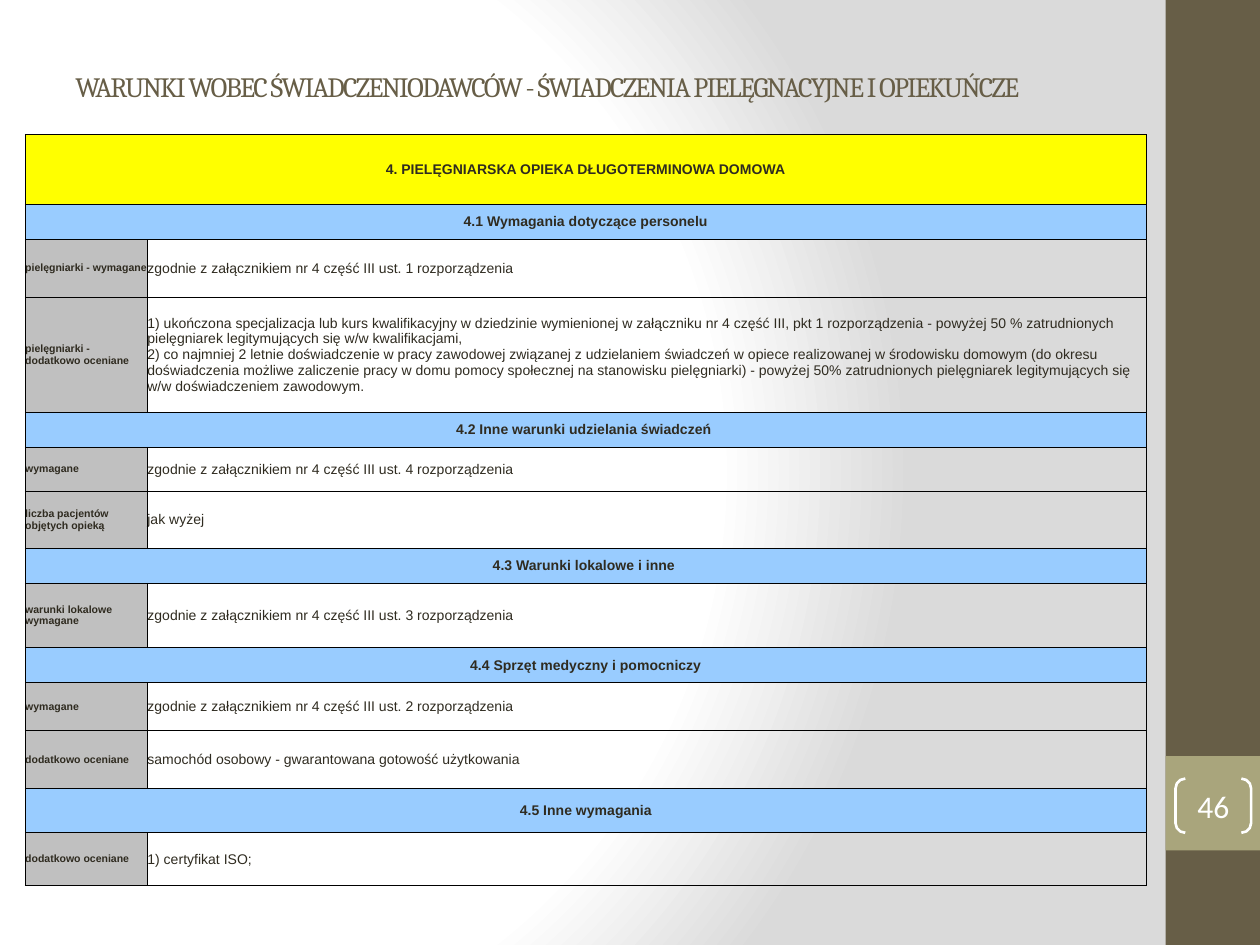
from pptx import Presentation
from pptx.dml.color import RGBColor
from pptx.enum.shapes import MSO_SHAPE
from pptx.enum.text import MSO_ANCHOR, PP_ALIGN
from pptx.oxml import parse_xml
from pptx.oxml.ns import nsdecls
from pptx.util import Inches, Pt

RECTANGLE = MSO_SHAPE.RECTANGLE
BRACKETS = MSO_SHAPE.DOUBLE_BRACKET
MIDDLE = MSO_ANCHOR.MIDDLE
LEFT, CENTER = PP_ALIGN.LEFT, PP_ALIGN.CENTER

BROWN = RGBColor(0x67, 0x5E, 0x47)
OLIVE = RGBColor(0xA9, 0xA5, 0x7C)
INK = RGBColor(0x2F, 0x2B, 0x20)
YELLOW = RGBColor(0xFF, 0xFF, 0x00)
BLUE = RGBColor(0x99, 0xCC, 0xFF)
GRAY = RGBColor(0xC0, 0xC0, 0xC0)
WHITE = RGBColor(0xFF, 0xFF, 0xFF)

TITLE = "WARUNKI WOBEC ŚWIADCZENIODAWCÓW - ŚWIADCZENIA PIELĘGNACYJNE I OPIEKUŃCZE"
COLUMN_WIDTHS = (0.97, 7.93)
QUALIFICATIONS = (
    "1) ukończona specjalizacja lub kurs kwalifikacyjny w dziedzinie wymienionej w "
    "załączniku nr 4 część III, pkt 1 rozporządzenia - powyżej 50 % zatrudnionych "
    "pielęgniarek legitymujących się w/w kwalifikacjami,\n"
    "2) co najmniej 2 letnie doświadczenie w pracy zawodowej związanej z udzielaniem "
    "świadczeń w opiece realizowanej w środowisku domowym (do okresu doświadczenia "
    "możliwe zaliczenie pracy w domu pomocy społecznej na stanowisku pielęgniarki) - "
    "powyżej 50% zatrudnionych pielęgniarek legitymujących się w/w doświadczeniem "
    "zawodowym."
)


def by_annex(point):
    return f"zgodnie z załącznikiem nr 4 część III ust. {point} rozporządzenia"


REQUIREMENTS = [
    (0.55, "4. PIELĘGNIARSKA OPIEKA DŁUGOTERMINOWA DOMOWA", None),
    (0.28, "4.1 Wymagania dotyczące personelu", None),
    (0.46, "pielęgniarki - wymagane", by_annex(1)),
    (0.91, "pielęgniarki - dodatkowo oceniane", QUALIFICATIONS),
    (0.28, "4.2 Inne warunki udzielania świadczeń ", None),
    (0.35, "wymagane", by_annex(4)),
    (0.45, "liczba pacjentów objętych opieką", "jak wyżej"),
    (0.28, "4.3 Warunki lokalowe i inne ", None),
    (0.51, "warunki lokalowe wymagane", by_annex(3)),
    (0.28, "4.4 Sprzęt medyczny i pomocniczy", None),
    (0.38, "wymagane", by_annex(2)),
    (0.46, "dodatkowo oceniane", "samochód osobowy - gwarantowana gotowość użytkowania"),
    (0.35, "4.5 Inne wymagania", None),
    (0.42, "dodatkowo oceniane", "1) certyfikat ISO;"),
]


def set_background(slide):
    slide.element.cSld.insert(0, parse_xml(
        f'<p:bg {nsdecls("p", "a")}><p:bgPr><a:gradFill rotWithShape="1"><a:gsLst>'
        '<a:gs pos="0"><a:srgbClr val="FFFFFF"/></a:gs>'
        '<a:gs pos="75000"><a:srgbClr val="FFFFFF"/></a:gs>'
        '<a:gs pos="100000"><a:srgbClr val="DADADA"/></a:gs></a:gsLst>'
        '<a:path path="circle"><a:fillToRect l="20000" t="50000" r="100000" b="50000"/>'
        '</a:path></a:gradFill><a:effectLst/></p:bgPr></p:bg>'))


def write(paragraph, text, font_name, size, color, align=LEFT, bold=False):
    paragraph.text = text
    paragraph.alignment = align
    font = paragraph.font
    font.name, font.size, font.bold = font_name, Pt(size), bold
    font.color.rgb = color


def clear_margins(box):
    box.margin_left = box.margin_right = box.margin_top = box.margin_bottom = 0


def add_band(slide, top, height, color):
    band = slide.shapes.add_shape(
        RECTANGLE, Inches(9.25), Inches(top), Inches(0.75), Inches(height))
    band.shadow.inherit = False
    band.fill.solid()
    band.fill.fore_color.rgb = color
    band.line.fill.background()


def add_title(slide):
    title = slide.shapes.add_textbox(Inches(0.5), Inches(0.3), Inches(8.33), Inches(0.77))
    frame = title.text_frame
    frame.word_wrap = True
    frame.vertical_anchor = MIDDLE
    heading = frame.paragraphs[0]
    write(heading, TITLE, "Cambria", 16, BROWN)
    heading.runs[0].font._element.set("spc", "-100")


def add_borders(cell):
    properties = cell._tc.get_or_add_tcPr()
    for side in ("lnL", "lnR", "lnT", "lnB"):
        properties.append(parse_xml(
            f'<a:{side} {nsdecls("a")} w="{Pt(0.5)}"><a:solidFill>'
            f'<a:srgbClr val="000000"/></a:solidFill></a:{side}>'))


def fill_cell(cell, text, size, color=None, align=LEFT, bold=False):
    clear_margins(cell)
    cell.vertical_anchor = MIDDLE
    if color is None:
        cell.fill.background()
    else:
        cell.fill.solid()
        cell.fill.fore_color.rgb = color
    write(cell.text_frame.paragraphs[0], text, "Arial", size, INK, align, bold)


def add_requirements(slide):
    height = sum(row[0] for row in REQUIREMENTS)
    table = slide.shapes.add_table(
        len(REQUIREMENTS), len(COLUMN_WIDTHS), Inches(0.2), Inches(1.07),
        Inches(sum(COLUMN_WIDTHS)), Inches(height)).table
    table.first_row = table.horz_banding = False
    for column, width in zip(table.columns, COLUMN_WIDTHS):
        column.width = Inches(width)
    for index, (row_height, label, requirement) in enumerate(REQUIREMENTS):
        table.rows[index].height = Inches(row_height)
        label_cell, requirement_cell = table.rows[index].cells
        add_borders(label_cell)
        add_borders(requirement_cell)
        if requirement is None:
            label_cell.merge(requirement_cell)
            color = YELLOW if index == 0 else BLUE
            fill_cell(label_cell, label, 8, color, CENTER, bold=True)
            fill_cell(requirement_cell, "", 8, color)
        else:
            fill_cell(label_cell, label, 6, GRAY, bold=True)
            fill_cell(requirement_cell, requirement, 8)


def add_page_number(slide, number):
    brackets = slide.shapes.add_shape(
        BRACKETS, Inches(9.33), Inches(6.18), Inches(0.6), Inches(0.43))
    brackets.shadow.inherit = False
    brackets.adjustments[0] = 0.18
    brackets.fill.background()
    brackets.line.color.rgb = WHITE
    brackets.line.width = Pt(1.5)
    frame = brackets.text_frame
    clear_margins(frame)
    frame.vertical_anchor = MIDDLE
    write(frame.paragraphs[0], number, "Calibri", 18, WHITE, CENTER)


def main():
    deck = Presentation()
    deck.slide_width, deck.slide_height = Inches(10), Inches(7.5)
    slide = deck.slides.add_slide(deck.slide_layouts[6])
    set_background(slide)
    add_band(slide, 0, 7.5, BROWN)
    add_band(slide, 6, 0.75, OLIVE)
    add_title(slide)
    add_requirements(slide)
    add_page_number(slide, "46")
    deck.save("out.pptx")


if __name__ == "__main__":
    main()
